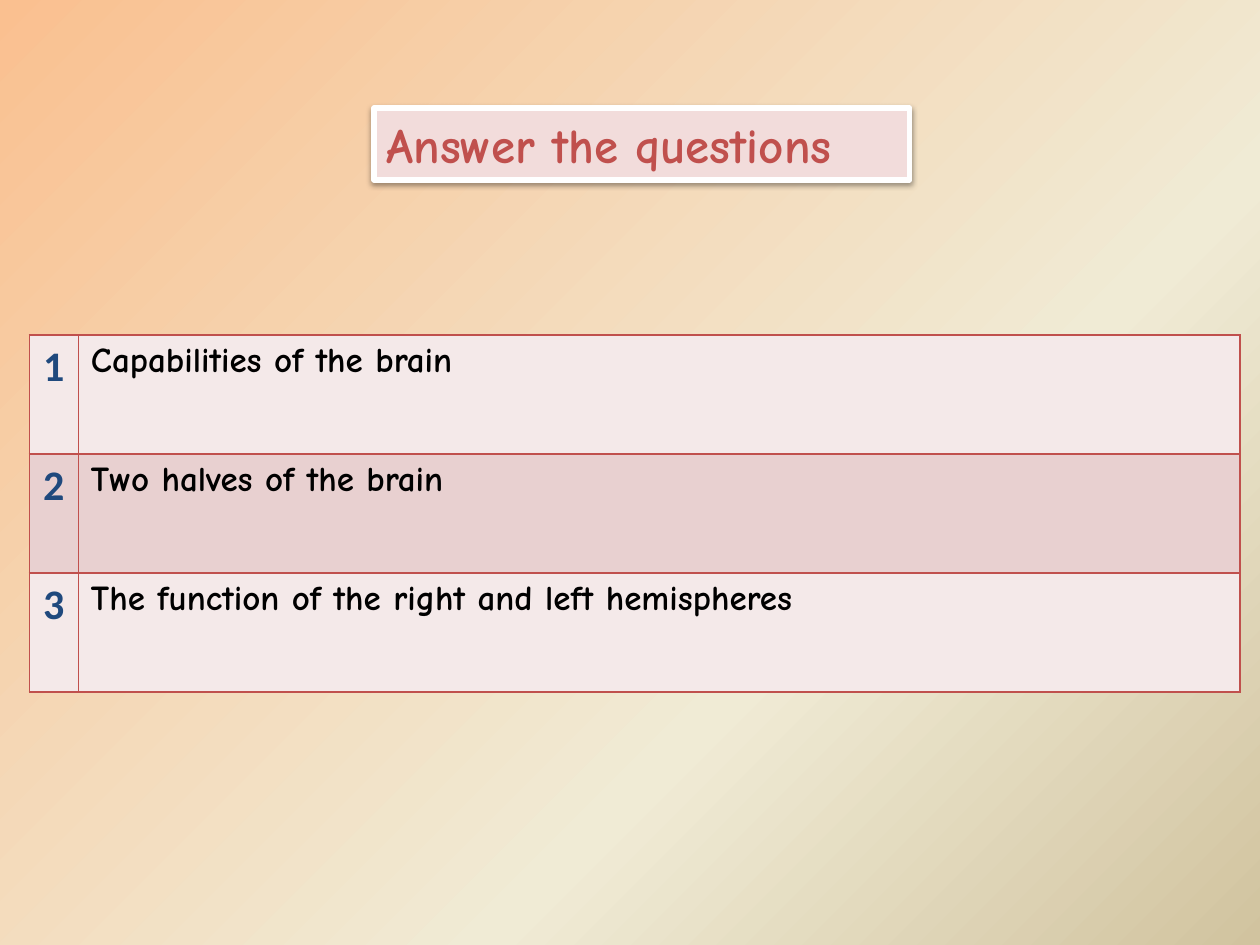
from copy import deepcopy

from lxml import etree
from pptx import Presentation
from pptx.dml.color import RGBColor
from pptx.enum.shapes import MSO_SHAPE
from pptx.enum.text import MSO_ANCHOR, PP_ALIGN
from pptx.oxml import parse_xml
from pptx.oxml.ns import nsdecls, qn
from pptx.util import Cm, Pt

RECT = MSO_SHAPE.RECTANGLE
TOP = MSO_ANCHOR.TOP
LEFT, CENTER = PP_ALIGN.LEFT, PP_ALIGN.CENTER

COLORS = {
    "peach": "FAC090", "cream": "F0EBD5", "sand": "D1C39F",
    "title_fill": "F2DCDB", "red": "C0504D", "white": "FFFFFF",
    "number": "1F497D", "text": "000000",
    "band_light": "F4E9E9", "band_dark": "E8D0D0",
}


def rgb(name):
    return RGBColor.from_string(COLORS[name])


def format_text(tf, size, font, color, align):
    p = tf.paragraphs[0]
    p.alignment = align
    f = p.runs[0].font
    f.size, f.name, f.bold = Pt(size), font, True
    f.color.rgb = rgb(color)


prs = Presentation()
prs.slide_width, prs.slide_height = Cm(25.4), Cm(19.05)
s = prs.slides.add_slide(prs.slide_layouts[6])

# Background: diagonal gradient with three stops
fill = s.background.fill
fill.gradient()
fill.gradient_angle = 315
gs_list = next(s._element.iter(qn("a:gsLst")))
gs_list.append(deepcopy(gs_list[-1]))
stops = [(0, "peach"), (0.65, "cream"), (1, "sand")]
for stop, (position, color) in zip(fill.gradient_stops, stops):
    stop.position = position
    stop.color.rgb = rgb(color)

# Title box with a soft shadow below
sp = s.shapes.add_shape(RECT, Cm(7.54), Cm(2.18), Cm(10.8), Cm(1.45))
sp.fill.solid()
sp.fill.fore_color.rgb = rgb("title_fill")
sp.line.color.rgb = rgb("white")
sp.line.width = Pt(3)
sp.shadow.inherit = False
effects = sp._element.spPr.find(qn("a:effectLst"))
effects.append(parse_xml(
    f'<a:outerShdw {nsdecls("a")} blurRad="39370" dist="20320" dir="5400000" '
    'rotWithShape="0"><a:srgbClr val="000000"><a:alpha val="38000"/>'
    '</a:srgbClr></a:outerShdw>'))
tf = sp.text_frame
tf.text = "Answer the questions"
tf.word_wrap = True
tf.vertical_anchor = TOP
format_text(tf, 28, "Comic Neue", "red", LEFT)

# Table of numbered questions
questions = [
    "Capabilities of the brain",
    "Two halves of the brain",
    "The function of the right and left hemispheres",
]
table = s.shapes.add_table(len(questions), 2, Cm(0.59), Cm(6.75),
                           Cm(24.41), Cm(7.2)).table
table.first_row = False
table.columns[0].width, table.columns[1].width = Cm(0.99), Cm(23.42)

for i, question in enumerate(questions):
    table.rows[i].height = Cm(2.4)
    band = "band_dark" if i % 2 else "band_light"
    columns = [(str(i + 1), 24, "Calibri", "number", CENTER),
               (question, 20, "Comic Neue", "text", LEFT)]
    for j, (text, *style) in enumerate(columns):
        cell = table.cell(i, j)
        cell.text_frame.text = text
        format_text(cell.text_frame, *style)
        cell.fill.solid()
        cell.fill.fore_color.rgb = rgb(band)
        # Borders come before the fill in the cell properties
        tcPr = cell._tc.get_or_add_tcPr()
        for k, side in enumerate(("lnL", "lnR", "lnT", "lnB")):
            ln = etree.Element(qn(f"a:{side}"), w=str(Pt(1)))
            solid = etree.SubElement(ln, qn("a:solidFill"))
            etree.SubElement(solid, qn("a:srgbClr"), val=COLORS["red"])
            tcPr.insert(k, ln)

prs.save("out.pptx")
